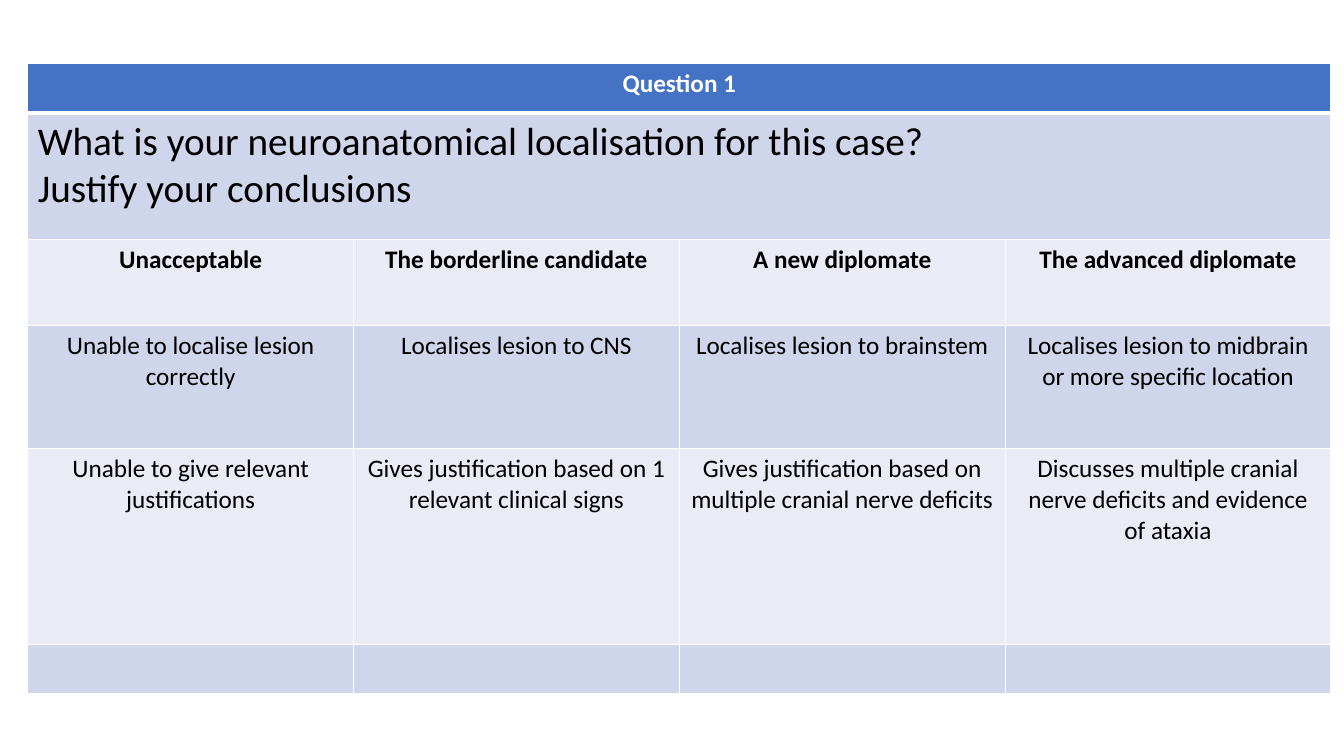
from lxml import etree
from pptx import Presentation
from pptx import util as u
from pptx.dml.color import RGBColor
from pptx.enum import text
from pptx.oxml.ns import qn

COLOURS = {"header": "4472C4", "dark_band": "CFD5EA", "light_band": "E9EBF5",
           "border": "FFFFFF", "header_text": "FFFFFF", "body_text": "000000"}
ROW_HEIGHTS = [1.24, 3.2, 2.16, 3.1, 4.95, 1.24]
COLUMN_WIDTH = 8.21
RUBRIC = [
    ["Question 1"],
    ["What is your neuroanatomical localisation for this case?\nJustify your conclusions"],
    ["Unacceptable", "The borderline candidate", "A new diplomate", "The advanced diplomate"],
    ["Unable to localise lesion correctly", "Localises lesion to CNS",
     "Localises lesion to brainstem", "Localises lesion to midbrain or more specific location"],
    ["Unable to give relevant justifications",
     "Gives justification based on 1 relevant clinical signs",
     "Gives justification based on multiple cranial nerve deficits",
     "Discusses multiple cranial nerve deficits and evidence of ataxia"],
    ["", "", "", ""],
]
HEADER_ROW, QUESTION_ROW, GRADE_ROW = 0, 1, 2


class RubricSlide:
    font_name = "Calibri"

    def __init__(self, presentation):
        self.slide = presentation.slides.add_slide(presentation.slide_layouts[6])

    def add_rubric(self, left, top, rows):
        """Add the marking table; a row with a single text spans all columns."""
        columns = max(len(row) for row in rows)
        frame = self.slide.shapes.add_table(
            len(rows), columns, u.Cm(left), u.Cm(top),
            u.Cm(COLUMN_WIDTH * columns), u.Cm(sum(ROW_HEIGHTS)))
        table = frame.table
        for column in table.columns:
            column.width = u.Cm(COLUMN_WIDTH)
        for index, (texts, height) in enumerate(zip(rows, ROW_HEIGHTS)):
            table.rows[index].height = u.Cm(height)
            if len(texts) == 1:
                table.cell(index, 0).merge(table.cell(index, columns - 1))
            for column in range(columns):
                self.format_cell(table.cell(index, column), index)
            for column, words in enumerate(texts):
                self.write_cell(table.cell(index, column), words, index)

    def format_cell(self, cell, row):
        band = "header" if row == HEADER_ROW else "dark_band" if row % 2 else "light_band"
        cell.fill.solid()
        cell.fill.fore_color.rgb = RGBColor.from_string(COLOURS[band])
        self.add_borders(cell, top=3 if row == QUESTION_ROW else 1,
                         bottom=3 if row == HEADER_ROW else 1)

    def add_borders(self, cell, top, bottom):
        properties = cell._tc.get_or_add_tcPr()
        sides = [("a:lnL", 1), ("a:lnR", 1), ("a:lnT", top), ("a:lnB", bottom)]
        # The schema wants the borders ahead of the fill.
        for position, (tag, width) in enumerate(sides):
            line = etree.Element(qn(tag), w=str(u.Pt(width)))
            fill = etree.SubElement(line, qn("a:solidFill"))
            etree.SubElement(fill, qn("a:srgbClr"), val=COLOURS["border"])
            properties.insert(position, line)

    def write_cell(self, cell, words, row):
        cell.text_frame.text = words
        colour = COLOURS["header_text" if row == HEADER_ROW else "body_text"]
        for paragraph in cell.text_frame.paragraphs:
            is_question = row == QUESTION_ROW
            paragraph.alignment = text.PP_ALIGN.LEFT if is_question else text.PP_ALIGN.CENTER
            paragraph.font.name = self.font_name
            paragraph.font.size = u.Pt(28 if is_question else 18)
            paragraph.font.bold = row in (HEADER_ROW, GRADE_ROW)
            paragraph.font.color.rgb = RGBColor.from_string(colour)


def main():
    presentation = Presentation()
    presentation.slide_width = u.Cm(33.87)
    presentation.slide_height = u.Cm(19.05)
    RubricSlide(presentation).add_rubric(0.7, 1.6, RUBRIC)
    presentation.save("out.pptx")


if __name__ == "__main__":
    main()
